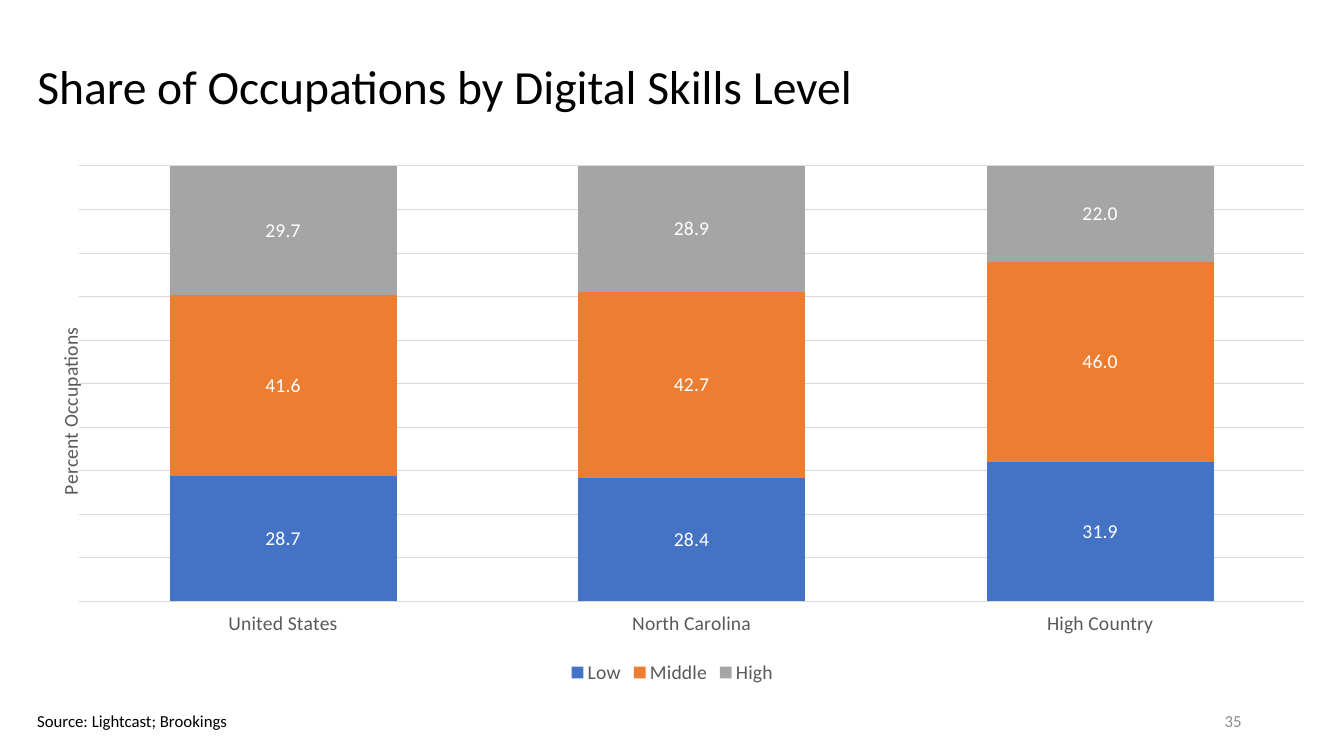
from lxml.etree import SubElement as Sub
from pptx import Presentation
from pptx.chart.data import CategoryChartData as ChartData
from pptx.dml.color import RGBColor as Rgb
from pptx.enum.chart import XL_CHART_TYPE as Kind, XL_LEGEND_POSITION as Legend
from pptx.enum.chart import XL_TICK_LABEL_POSITION as Label, XL_TICK_MARK as Tick
from pptx.enum.text import MSO_ANCHOR as Anchor, PP_ALIGN as Align
from pptx.oxml.ns import qn
from pptx.util import Pt

FONT = "Calibri"
COLORS = {
    "black": "000000", "white": "FFFFFF", "text": "595959",
    "page": "8C8C8C", "grid": "D9D9D9",
    "Low": "4472C4", "Middle": "ED7D31", "High": "A5A5A5",
}
TITLE = "Share of Occupations by Digital Skills Level"
SOURCE = "Source: Lightcast; Brookings"
PAGE = "35"
AXIS = "Percent Occupations"
PLACES = ["United States", "North Carolina", "High Country"]
SHARES = {
    "Low": (28.7, 28.4, 31.9),
    "Middle": (41.6, 42.7, 46.0),
    "High": (29.7, 28.9, 22.0),
}
LEFT = 19.44


def paint(font, size, color):
    font.name = FONT
    font.size = Pt(size)
    font.bold = False
    font.color.rgb = Rgb.from_string(COLORS[color])


def rule(line):
    line.width = Pt(0.75)
    line.color.rgb = Rgb.from_string(COLORS["grid"])


def place(shape, left, top, width, height):
    shape.left, shape.top = Pt(left), Pt(top)
    shape.width, shape.height = Pt(width), Pt(height)


def write(frame, text, size, color, align=Align.LEFT, anchor=Anchor.MIDDLE):
    frame.text = text
    frame.vertical_anchor = anchor
    para = frame.paragraphs[0]
    para.alignment = align
    paint(para.runs[0].font, size, color)
    return para


def lay_out(parent, index, **sizes):
    for old in parent.findall(qn("c:layout")):
        parent.remove(old)
    layout = Sub(parent, qn("c:layout"))
    parent.insert(index, layout)
    manual = Sub(layout, qn("c:manualLayout"))
    if "w" in sizes:
        Sub(manual, qn("c:layoutTarget")).set("val", "inner")
    for side in "xy":
        Sub(manual, qn(f"c:{side}Mode")).set("val", "edge")
    for side, size in sizes.items():
        Sub(manual, qn(f"c:{side}")).set("val", str(size))


def add_bars(slide):
    data = ChartData(number_format="0.0")
    data.categories = PLACES
    for name, shares in SHARES.items():
        data.add_series(name, shares)
    chart = slide.shapes.add_chart(
        Kind.COLUMN_STACKED_100, Pt(LEFT), Pt(103), Pt(921.6), Pt(388.8), data
    ).chart
    paint(chart.font, 14, "black")
    chart.has_title = False
    chart.has_legend = True
    chart.legend.position = Legend.BOTTOM
    chart.legend.include_in_layout = False
    paint(chart.legend.font, 14, "text")

    plot = chart.plots[0]
    plot.gap_width = 80
    plot.overlap = 100
    plot.vary_by_categories = False
    for series in plot.series:
        fill = series.format.fill
        fill.solid()
        fill.fore_color.rgb = Rgb.from_string(COLORS[series.name])
        labels = series.data_labels
        labels.show_value = True
        labels.number_format = "0.0"
        labels.number_format_is_linked = False
        paint(labels.font, 14, "white")

    cats = chart.category_axis
    cats.major_tick_mark = cats.minor_tick_mark = Tick.NONE
    cats.tick_label_position = Label.LOW
    paint(cats.tick_labels.font, 14, "text")
    rule(cats.format.line)

    vals = chart.value_axis
    vals.visible = False
    vals.has_major_gridlines = True
    rule(vals.major_gridlines.format.line)
    vals.tick_labels.number_format = "0.0"
    vals.tick_labels.number_format_is_linked = False
    frame = vals.axis_title.text_frame
    frame.text = AXIS
    paint(frame.paragraphs[0].runs[0].font, 14, "text")

    area = chart._chartSpace.find(".//" + qn("c:plotArea"))
    head = area.find(".//" + qn("c:title"))
    body = head.find(".//" + qn("a:bodyPr"))
    body.set("rot", "-5400000")
    body.set("vert", "horz")
    lay_out(head, 1, x=0.02, y=0.33)
    lay_out(area, 0, x=0.04, y=0.04, w=0.95, h=0.8)


def main():
    deck = Presentation()
    deck.slide_width, deck.slide_height = Pt(960), Pt(540)
    slide = deck.slides.add_slide(deck.slide_layouts[5])

    title = slide.shapes.title
    place(title, LEFT, 24.5, 918.7, 78.5)
    write(title.text_frame, TITLE, 34, "black").line_spacing = 0.9

    add_bars(slide)

    source = slide.shapes.add_textbox(Pt(LEFT), Pt(504), Pt(152), Pt(21.6))
    write(source.text_frame, SOURCE, 12, "black", anchor=Anchor.TOP)

    page = slide.shapes.add_textbox(Pt(678), Pt(500.4), Pt(216), Pt(28.8))
    page.text_frame.word_wrap = True
    write(page.text_frame, PAGE, 12, "page", align=Align.RIGHT)

    deck.save("out.pptx")


if __name__ == "__main__":
    main()
